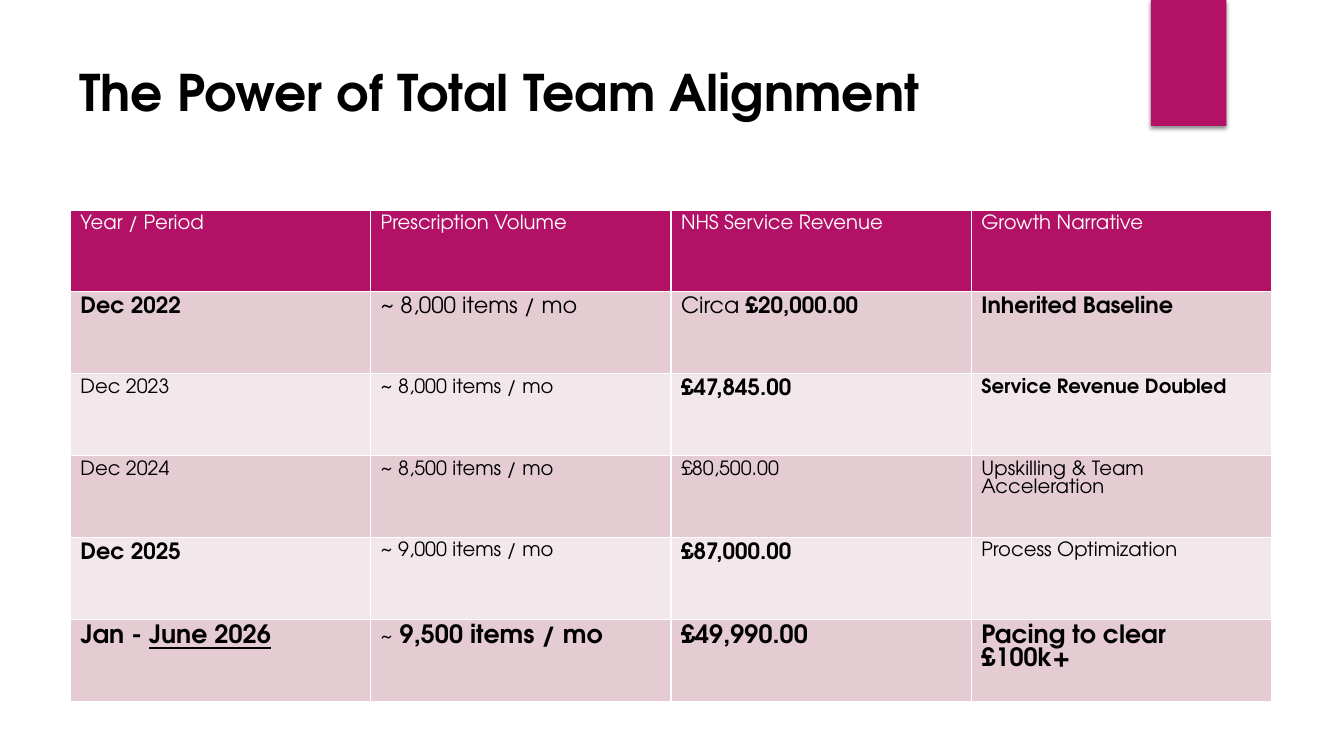
from lxml import etree
from pptx import Presentation
from pptx.dml.color import RGBColor
from pptx.enum.shapes import MSO_SHAPE
from pptx.enum.text import MSO_ANCHOR, MSO_AUTO_SIZE, PP_ALIGN
from pptx.oxml import parse_xml
from pptx.util import Emu, Pt

RECTANGLE = MSO_SHAPE.RECTANGLE
TOP = MSO_ANCHOR.TOP
LEFT = PP_ALIGN.LEFT
NO_AUTOFIT = MSO_AUTO_SIZE.NONE
TITLE_ONLY = 5
EMU_PER_PX = 9525
NAMESPACE = "http://schemas.openxmlformats.org/drawingml/2006/main"

COLORS = {
    "accent": "B31166",
    "dark_band": "E5CCD3",
    "light_band": "F2E7EA",
    "text": "000000",
    "white": "FFFFFF",
}

# Each cell is a list of runs: (text, size, style letters b = bold, u = underline)
HEADER = ["Year / Period", "Prescription Volume", "NHS Service Revenue", "Growth Narrative"]
ROWS = [
    [[(heading, 14, "")] for heading in HEADER],
    [[("Dec 2022", 16, "b")], [("~ 8,000 items / mo", 16, "")],
     [("Circa ", 16, ""), ("£20,000.00", 16, "b")], [("Inherited Baseline", 16, "b")]],
    [[("Dec 2023", 14, "")], [("~ 8,000 items / mo", 14, "")],
     [("£47,845.00", 16, "b")], [("Service Revenue Doubled", 14, "b")]],
    [[("Dec 2024", 14, "")], [("~ 8,500 items / mo", 14, "")],
     [("£80,500.00", 14, "")], [("Upskilling & Team Acceleration", 14, "")]],
    [[("Dec 2025", 16, "b")], [("~ 9,000 items / mo", 14, "")],
     [("£87,000.00", 16, "b")], [("Process Optimization", 14, "")]],
    [[("Jan - ", 18, "b"), ("June 2026", 18, "bu")],
     [("~", 14, ""), (" 9,500 items / mo", 18, "b")],
     [("£49,990.00", 18, "b")], [("Pacing to clear £100k+", 18, "b")]],
]


def px(value):
    return Emu(value * EMU_PER_PX)


class SlideBuilder:
    font = "TeX Gyre Adventor"

    def __init__(self, presentation):
        layout = presentation.slide_layouts[TITLE_ONLY]
        self.slide = presentation.slides.add_slide(layout)

    def color(self, name):
        return RGBColor.from_string(COLORS[name])

    def format_run(self, run, size, color, style=""):
        run.font.name = self.font
        run.font.size = Pt(size)
        run.font.bold = "b" in style
        run.font.underline = "u" in style
        run.font.color.rgb = self.color(color)

    def title(self, text, left, top, width, height):
        shape = self.slide.shapes.title
        shape.left, shape.top, shape.width, shape.height = map(px, (left, top, width, height))
        frame = shape.text_frame
        frame.text = text
        frame.auto_size = NO_AUTOFIT
        frame.vertical_anchor = TOP
        paragraph = frame.paragraphs[0]
        paragraph.alignment = LEFT
        self.format_run(paragraph.runs[0], 36, "text", "b")

    def ribbon(self, left, top, width, height):
        shape = self.slide.shapes.add_shape(RECTANGLE, *map(px, (left, top, width, height)))
        shape.fill.solid()
        shape.fill.fore_color.rgb = self.color("accent")
        shape.line.fill.background()
        shape.shadow.inherit = False
        effects = shape.element.spPr.find(f"{{{NAMESPACE}}}effectLst")
        effects.append(parse_xml(
            f'<a:outerShdw xmlns:a="{NAMESPACE}" blurRad="{Pt(3)}" dist="{Pt(2)}" dir="5400000">'
            '<a:srgbClr val="000000"><a:alpha val="45000"/></a:srgbClr></a:outerShdw>'))

    def borders(self, cell):
        properties = cell._tc.get_or_add_tcPr()
        for position, side in enumerate(("lnL", "lnR", "lnT", "lnB")):
            line = etree.Element(f"{{{NAMESPACE}}}{side}", w=str(Pt(1)))
            fill = etree.SubElement(line, f"{{{NAMESPACE}}}solidFill")
            etree.SubElement(fill, f"{{{NAMESPACE}}}srgbClr", val=COLORS["white"])
            properties.insert(position, line)

    def cell(self, cell, runs, fill, text_color):
        cell.fill.solid()
        cell.fill.fore_color.rgb = self.color(fill)
        self.borders(cell)
        paragraph = cell.text_frame.paragraphs[0]
        for text, size, style in runs:
            run = paragraph.add_run()
            run.text = text
            self.format_run(run, size, text_color, style)

    def table(self, rows, left, top, column_width, row_height):
        columns = len(rows[0])
        size = (left, top, column_width * columns, row_height * len(rows))
        table = self.slide.shapes.add_table(len(rows), columns, *map(px, size)).table
        for row_index, row in enumerate(rows):
            if row_index == 0:
                fill, text_color = "accent", "white"
            else:
                fill = "dark_band" if row_index % 2 else "light_band"
                text_color = "text"
            for column_index, runs in enumerate(row):
                self.cell(table.cell(row_index, column_index), runs, fill, text_color)


def main():
    presentation = Presentation()
    presentation.slide_width, presentation.slide_height = px(1280), px(720)
    builder = SlideBuilder(presentation)

    # Heading and corner ribbon
    builder.title("The Power of Total Team Alignment", 66, 53, 1067, 68)
    builder.ribbon(1096, 0, 72, 120)

    # Yearly results
    builder.table(ROWS, 67, 200, 286, 78)

    presentation.save("out.pptx")


if __name__ == "__main__":
    main()
